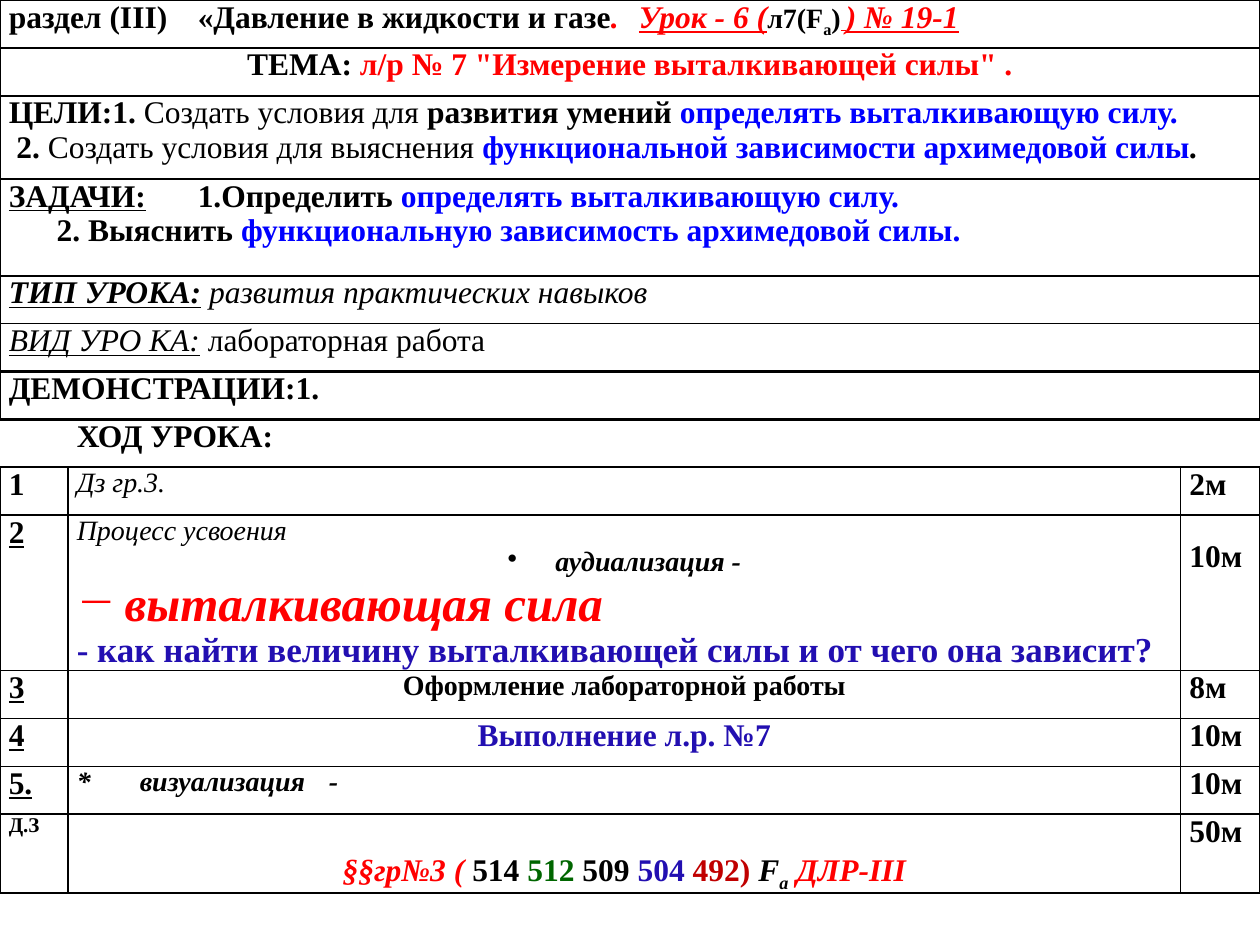
from lxml import etree
from pptx import Presentation
from pptx.dml import color
from pptx.enum import text
from pptx.oxml import ns
from pptx.util import Inches, Pt

FONT = "Times New Roman"
BLACK, RED, BLUE, INDIGO = "000000", "FF0000", "0000FF", "220FB1"
GREEN, CRIMSON = "006600", "C00000"
THIN, THICK = 1, 1.5
COLUMNS = [0.54, 8.83, 0.63]


def rgb(value):
    return color.RGBColor.from_string(value)


def span(words, style="b", ink=BLACK, size=18):
    """Style letters: b bold, i italic, u underlined, s subscript."""
    return words, style, ink, size


def line(*spans, centered=False, indent=0, hanging=0, bullet=None, tabs=(), spacing=None):
    return dict(spans=spans, centered=centered, indent=indent, hanging=hanging,
                bullet=bullet, tabs=tabs, spacing=spacing)


# Each header row: height, lines
HEADER = [
    (0.38, [line(span("раздел (III)\t«Давление в жидкости и газе"), span(".\t", "bi", RED),
                 span("Урок - 6 (", "biu", RED), span("л7(F", size=16),
                 span("a", "bs", size=16), span(")", size=16),
                 span(" ", "biu", RED, 12), span(") № 19-1", "biu", RED),
                 tabs=(1.57, 6.79))]),
    (0.38, [line(span("ТЕМА:"), span(' л/р № 7 "Измерение выталкивающей силы" .', "b", RED),
                 centered=True)]),
    (0.66, [line(span("ЦЕЛИ:1."), span(" Создать условия для", ""),
                 span(" развития умений "), span("определять выталкивающую силу.", "b", BLUE)),
            line(span("2. "), span("Создать условия для выяснения ", ""),
                 span("функциональной зависимости архимедовой силы", "b", BLUE),
                 span(".", "bi"), indent=0.06)]),
    (0.77, [line(span("ЗАДАЧИ:", "bu"), span("\t1.Определить "),
                 span("определять выталкивающую силу.", "b", BLUE), tabs=(1.34,)),
            line(span("2. Выяснить"),
                 span(" функциональную зависимость архимедовой силы.", "b", BLUE),
                 indent=0.38)]),
    (0.38, [line(span("ТИП УРОКА:", "biu"), span(" развития практических навыков", "i"))]),
    (0.38, [line(span("ВИД УРО КА:", "iu"), span(" лабораторная работа", ""))]),
    (0.38, [line(span("ДЕМОНСТРАЦИИ:1."))]),
]

# Each stage row: height, number, lines, duration
STAGES = [
    (0.38, span("1"), [line(span("Дз гр.3.", "i", size=16))], "2м"),
    (1.13, span("2", "bu"), [
        line(span("Процесс усвоения", "i", size=16)),
        line(span("аудиализация -", "bi", size=16), centered=True,
             indent=0.38, hanging=0.38, bullet="•"),
        line(span("выталкивающая сила", "bi", RED, 28),
             indent=0.38, hanging=0.38, bullet="−"),
        line(span("- как найти величину выталкивающей силы и от чего она зависит?",
                  "b", INDIGO, 20), indent=0.38, hanging=0.38)], "10м"),
    (0.38, span("3", "bu"), [line(span("Оформление лабораторной работы", size=16),
                                  centered=True)], "8м"),
    (0.38, span("4", "bu"), [line(span("Выполнение л.р. №7", "b", INDIGO),
                                  centered=True)], "10м"),
    (0.38, span("5.", "bu"), [line(span("*\tвизуализация\t-", "bi", size=16),
                                   tabs=(0.22, 1.7))], "10м"),
    (0.38, span("Д.З", size=12), [
        line(span("§§гр№3 ( ", "bi", RED), span("514 "), span("512 ", "b", GREEN),
             span("509 "), span("504 ", "b", INDIGO), span("492) ", "b", CRIMSON),
             span("F", "bi"), span("a", "bis"), span(" ", "bi"), span("ДЛР-III", "bi", RED),
             centered=True, spacing=45)], "50м"),
]
COURSE_ROW = len(HEADER)
COURSE_HEIGHT = 0.38
# Widths of the horizontal rules, from the top edge down
RULES = [THIN, THICK, THICK, THIN, THIN, THIN, THICK, THICK,
         THICK, THIN, THIN, THIN, THIN, THICK, THICK]


def add_span(para, words, style, ink, size):
    run = para.add_run()
    run.text = words
    font = run.font
    font.name, font.size = FONT, Pt(size)
    font.bold, font.italic, font.underline = ("b" in style), ("i" in style), ("u" in style)
    font.color.rgb = rgb(ink)
    if "s" in style:
        font._rPr.set("baseline", "-25000")


def format_line(para, row):
    para.alignment = text.PP_ALIGN.CENTER if row["centered"] else text.PP_ALIGN.LEFT
    if row["spacing"]:
        para.line_spacing = Pt(row["spacing"])
    props = para._p.get_or_add_pPr()
    props.set("marL", str(Inches(row["indent"])))
    props.set("indent", str(-Inches(row["hanging"])))
    if row["bullet"]:
        etree.SubElement(props, ns.qn("a:buChar"), char=row["bullet"])
    else:
        etree.SubElement(props, ns.qn("a:buNone"))
    if row["tabs"]:
        stops = etree.SubElement(props, ns.qn("a:tabLst"))
        for stop in row["tabs"]:
            etree.SubElement(stops, ns.qn("a:tab"), pos=str(Inches(stop)), algn="l")


def write(cell, lines):
    frame = cell.text_frame
    for index, row in enumerate(lines):
        para = frame.add_paragraph() if index else frame.paragraphs[0]
        for part in row["spans"]:
            add_span(para, *part)
        format_line(para, row)


def set_borders(cell, **widths):
    """Draw left, right, top and bottom edges; a width of 0 hides one."""
    props = cell._tc.get_or_add_tcPr()
    for side, tag in dict(left="L", right="R", top="T", bottom="B").items():
        width = widths[side]
        edge = etree.SubElement(props, ns.qn(f"a:ln{tag}"), w=str(Pt(width)))
        if width:
            fill = etree.SubElement(edge, ns.qn("a:solidFill"))
            etree.SubElement(fill, ns.qn("a:srgbClr"), val=BLACK)
        else:
            etree.SubElement(edge, ns.qn("a:noFill"))


def side_widths(row, column):
    if row < COURSE_ROW:
        width = THICK if row in (1, COURSE_ROW - 1) else THIN
        return width, width
    if row == COURSE_ROW:
        return 0, 0
    last = row == len(RULES) - 2
    edges = [THICK, THIN if last else THICK, THIN, THICK if last else THIN]
    return edges[column], edges[column + 1]


def style_cells(table):
    for row in range(len(RULES) - 1):
        for column in range(len(COLUMNS)):
            cell = table.cell(row, column)
            cell.margin_left = cell.margin_right = Inches(0.07)
            cell.margin_top = cell.margin_bottom = 0
            left, right = side_widths(row, column)
            set_borders(cell, left=left, right=right, top=RULES[row], bottom=RULES[row + 1])
            cell.fill.background()


def add_lesson_plan(page, left, top, width):
    heights = [row[0] for row in HEADER] + [COURSE_HEIGHT] + [row[0] for row in STAGES]
    table = page.shapes.add_table(len(heights), len(COLUMNS), left, top, width,
                                  Inches(sum(heights))).table
    table.first_row = table.horz_banding = False
    for column, size in zip(table.columns, COLUMNS):
        column.width = int(width * size / sum(COLUMNS))
    for row, height in zip(table.rows, heights):
        row.height = Inches(height)
    style_cells(table)
    for index, (_, lines) in enumerate(HEADER):
        table.cell(index, 0).merge(table.cell(index, len(COLUMNS) - 1))
        write(table.cell(index, 0), lines)
    write(table.cell(COURSE_ROW, 1), [line(span("ХОД УРОКА:"))])
    for index, (_, number, lines, duration) in enumerate(STAGES, COURSE_ROW + 1):
        write(table.cell(index, 0), [line(number)])
        write(table.cell(index, 1), lines)
        write(table.cell(index, 2), [line(span(duration))])
    table.cell(COURSE_ROW + 2, 2).margin_top = Inches(0.19)


def main():
    deck = Presentation()
    deck.slide_width, deck.slide_height = Inches(10), Inches(7.5)
    page = deck.slides.add_slide(deck.slide_layouts[6])
    add_lesson_plan(page, 0, 0, deck.slide_width)
    deck.save("out.pptx")


if __name__ == "__main__":
    main()
